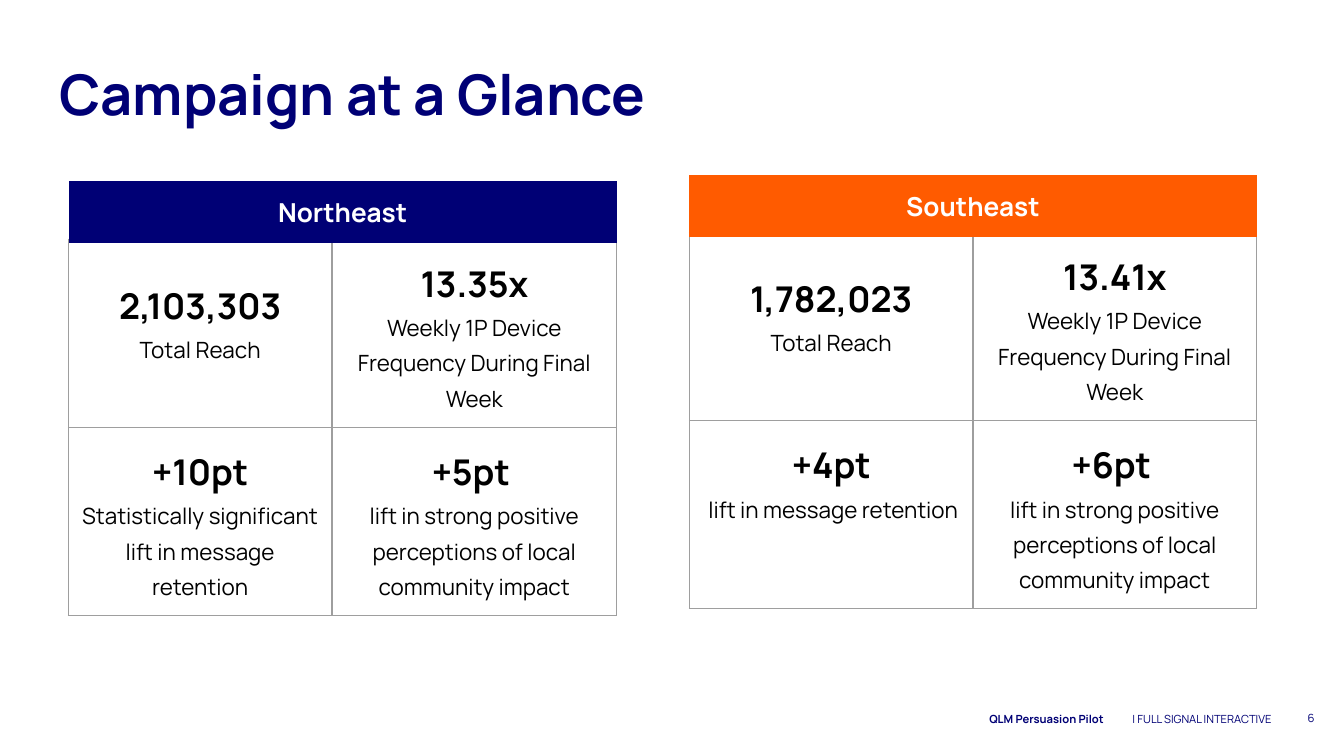
import pptx
import pptx.util
import pptx.dml.color
import pptx.enum.text
import pptx.oxml
import pptx.oxml.ns

Inch = pptx.util.Inches
Pt = pptx.util.Pt
ALIGN = pptx.enum.text.PP_ALIGN
ANCHOR = pptx.enum.text.MSO_ANCHOR
NAVY, ORANGE, GREY = "000075", "FF5B00", "9E9E9E"
PLAIN = "{2D5ABB26-0587-4C30-8999-92F81FD0307C}"
WIDE = 10
HIGH = WIDE * 9 / 16
HEAD, LAP = 0.46, 0.03
ROWS = [1.4, 1.4]

FREQ = "Weekly 1P Device Frequency During Final Week"
LOCAL = "lift in strong positive perceptions of local community impact"
REGIONS = [
    dict(name="Northeast", fill=NAVY, left=0.51, top=1.35, cols=[1.96, 2.12],
         cells=[[("2,103,303", "Total Reach"), ("13.35x", FREQ)],
                [("+10pt", "Statistically significant lift in message retention"),
                 ("+5pt ", LOCAL)]]),
    dict(name="Southeast", fill=ORANGE, left=5.13, top=1.3, cols=[2.11, 2.11],
         cells=[[("1,782,023", "Total Reach"), ("13.41x", FREQ)],
                [("+4pt", " lift in message retention"), ("+6pt ", LOCAL)]]),
]
NOTES = [
    ("| FULL SIGNAL INTERACTIVE", (7.15, 5.26, 2.38, 0.18), False, (0.07, 0.04), ANCHOR.TOP),
    ("6", (9.28, 5.13, 0.6, 0.43), False, (0.1, 0.1), ANCHOR.MIDDLE),
    ("QLM Persuasion Pilot", (1.22, 5.26, 7.09, 0.18), True, (0.1, 0.1), ANCHOR.MIDDLE),
]


def paint(hue):
    return pptx.dml.color.RGBColor.from_string(hue)


def write(para, text, size, hue="000000", bold=False, align=ALIGN.CENTER, space=None):
    para.alignment = align
    if space:
        para.line_spacing = space
    run = para.add_run()
    run.text = text
    font = run.font
    font.name, font.size, font.bold = "Manrope", Pt(size), bold
    font.color.rgb = paint(hue)


def pad(box, side, end):
    box.margin_left = box.margin_right = Inch(side)
    box.margin_top = box.margin_bottom = Inch(end)


def edge(cell):
    props = cell._tc.get_or_add_tcPr()
    for side in "LRTB":
        props.append(pptx.oxml.parse_xml(
            f'<a:ln{side} xmlns:a="http://schemas.openxmlformats.org/drawingml/2006/main"'
            f' w="{Pt(0.75)}"><a:solidFill><a:srgbClr val="{GREY}"/></a:solidFill></a:ln{side}>'))


def grid(slide, left, top, cols, rows):
    place = map(Inch, (left, top, sum(cols), sum(rows)))
    table = slide.shapes.add_table(len(rows), len(cols), *place).table
    table.first_row = table.horz_banding = False
    table._tbl.tblPr.find(pptx.oxml.ns.qn("a:tableStyleId")).text = PLAIN
    for col, wide in zip(table.columns, cols):
        col.width = Inch(wide)
    for row, high in zip(table.rows, rows):
        row.height = Inch(high)
    for cell in table.iter_cells():
        pad(cell, 0.1, 0.1)
    return table


def region(slide, item):
    left, top, cols = item["left"], item["top"], item["cols"]
    body = grid(slide, left, top + HEAD - LAP, cols, ROWS)
    for r, row in enumerate(item["cells"]):
        for c, (stat, label) in enumerate(row):
            cell = body.cell(r, c)
            edge(cell)
            cell.fill.background()
            frame = cell.text_frame
            write(frame.paragraphs[0], stat, 19, bold=True, space=1.15)
            write(frame.add_paragraph(), label, 12, space=1.15)
    reach = body.cell(0, 0)
    reach.vertical_anchor = ANCHOR.MIDDLE
    reach.margin_bottom = Inch(0.3)
    head = grid(slide, left, top, [sum(cols)], [HEAD]).cell(0, 0)
    head.fill.solid()
    head.fill.fore_color.rgb = paint(item["fill"])
    write(head.text_frame.paragraphs[0], item["name"], 14, "FFFFFF", True)


def main():
    deck = pptx.Presentation()
    deck.slide_width, deck.slide_height = Inch(WIDE), Inch(HIGH)
    slide = deck.slides.add_slide(deck.slide_layouts[5])
    title = slide.shapes.title
    title.left, title.top, title.width, title.height = map(Inch, (0.34, 0.34, 9.07, 1))
    frame = title.text_frame
    frame.auto_size = pptx.enum.text.MSO_AUTO_SIZE.NONE
    frame.vertical_anchor = ANCHOR.TOP
    pad(frame, 0.1, 0.1)
    write(frame.paragraphs[0], "Campaign at a Glance", 30, NAVY, True, ALIGN.LEFT)
    for text, place, bold, gaps, anchor in NOTES:
        frame = slide.shapes.add_textbox(*map(Inch, place)).text_frame
        frame.word_wrap = True
        frame.vertical_anchor = anchor
        pad(frame, *gaps)
        write(frame.paragraphs[0], text, 6, NAVY, bold, ALIGN.RIGHT)
    for item in REGIONS:
        region(slide, item)
    deck.save("out.pptx")


if __name__ == "__main__":
    main()
